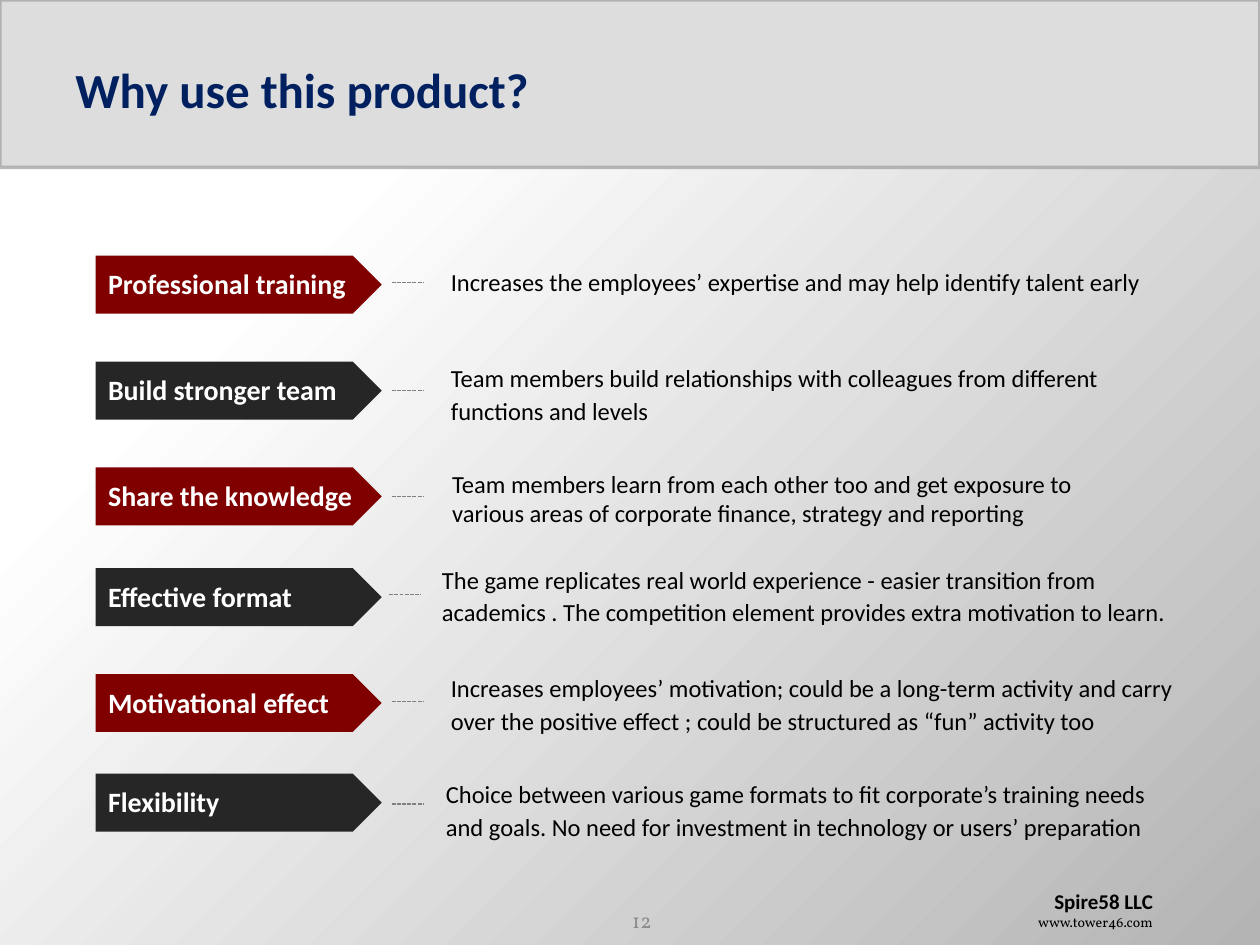
import pptx
import pptx.util
import pptx.dml.color
import pptx.enum.dml
import pptx.enum.shapes
import pptx.enum.text
import pptx.oxml
import pptx.oxml.ns
from pptx.util import Inches, Pt

COLORS = {
    "white": "FFFFFF", "shade": "B4B4B4", "band": "DDDDDD", "band_edge": "A6A6A6",
    "navy": "002060", "red": "800000", "charcoal": "262626", "black": "000000",
    "number": "8C8C8C", "dash": "808080",
}
ALIGN = pptx.enum.text.PP_ALIGN
ANCHOR = pptx.enum.text.MSO_ANCHOR
SHAPE = pptx.enum.shapes.MSO_SHAPE
qn = pptx.oxml.ns.qn
NAMESPACE = pptx.oxml.ns.nsdecls("a")

PLATE_LEFT, PLATE_WIDTH, PLATE_HEIGHT = 0.76, 2.27, 0.46
DASH_LENGTH = 0.25

# label, plate top, dash (left, y), description box, indent, line spacing in points, description
BENEFITS = [
    ("Professional training", 2.03, (3.11, 2.24), (3.48, 2.05, 5.76, 0.35), 0, 18,
     "Increases the employees’ expertise and may help identify talent early"),
    ("Build stronger team", 2.87, (3.11, 3.1), (3.36, 2.8, 6.16, 0.63), 0.12, 19,
     "Team members build relationships with colleagues from different functions and levels"),
    ("Share the knowledge", 3.71, (3.11, 3.94), (3.49, 3.67, 5.58, 0.57), 0, None,
     "Team members learn from each other too and get exposure to various areas of "
     "corporate finance, strategy and reporting"),
    ("Effective format", 4.51, (3.09, 4.72), (3.41, 4.42, 6.16, 0.61), 0, 18,
     "The game replicates real world experience - easier transition from academics . "
     "The competition element provides extra motivation to learn."),
    ("Motivational effect", 5.35, (3.11, 5.57), (3.36, 5.26, 6.16, 0.63), 0.12, 19,
     "Increases employees’ motivation; could be a long-term activity and carry over the "
     "positive effect ; could be structured as “fun” activity too"),
    ("Flexibility", 6.14, (3.11, 6.38), (3.32, 6.1, 6.09, 0.63), 0.12, 19,
     "Choice between various game formats to fit corporate’s training needs and goals. "
     "No need for investment in technology or users’ preparation"),
]


def rgb(name):
    return pptx.dml.color.RGBColor.from_string(COLORS[name])


class SlideBuilder:
    def __init__(self, page, font="Calibri"):
        self.page = page
        self.font = font

    def background(self, inner, outer):
        """Shade the page outwards from its top left corner."""
        self.page.background.fill.gradient()
        gradient = self.page.element.find(".//" + qn("a:gradFill"))
        for child in list(gradient):
            gradient.remove(child)
        stops = "".join(
            f'<a:gs pos="{position}"><a:srgbClr val="{COLORS[color]}"/></a:gs>'
            for position, color in ((24000, inner), (100000, outer)))
        gradient.append(pptx.oxml.parse_xml(f"<a:gsLst {NAMESPACE}>{stops}</a:gsLst>"))
        gradient.append(pptx.oxml.parse_xml(
            f'<a:path {NAMESPACE} path="circle">'
            '<a:fillToRect r="100000" b="100000"/></a:path>'))

    def shape(self, kind, bounds, fill):
        shape = self.page.shapes.add_shape(kind, *map(Inches, bounds))
        shape.shadow.inherit = False
        shape.fill.solid()
        shape.fill.fore_color.rgb = rgb(fill)
        shape.line.fill.background()
        return shape

    def header_band(self, bounds):
        band = self.shape(SHAPE.RECTANGLE, bounds, "band")
        band.line.color.rgb = rgb("band_edge")
        band.line.width = Pt(2)
        edge_color = band.element.find(".//" + qn("a:ln")).find(".//" + qn("a:srgbClr"))
        edge_color.append(pptx.oxml.parse_xml(f'<a:alpha {NAMESPACE} val="78000"/>'))

    def text(self, bounds, content, size, color="black", bold=False, font=None,
             align=ALIGN.LEFT, anchor=ANCHOR.TOP, indent=0, spacing=None):
        box = self.page.shapes.add_textbox(*map(Inches, bounds))
        box.text_frame.word_wrap = True
        box.text_frame.vertical_anchor = anchor
        para = box.text_frame.paragraphs[0]
        if indent:
            para._p.get_or_add_pPr().set("marL", str(Inches(indent)))
        self.fill_paragraph(para, content, size, color, bold, font, align)
        if spacing:
            para.line_spacing = Pt(spacing)
        return box

    def fill_paragraph(self, para, content, size, color="black", bold=False,
                       font=None, align=ALIGN.LEFT):
        para.text = content
        para.alignment = align
        para.font.name = font or self.font
        para.font.size = Pt(size)
        para.font.bold = bold
        para.font.color.rgb = rgb(color)

    def dash(self, left, y):
        dash = self.page.shapes.add_connector(
            pptx.enum.shapes.MSO_CONNECTOR.STRAIGHT,
            Inches(left), Inches(y), Inches(left + DASH_LENGTH), Inches(y))
        dash.line.color.rgb = rgb("dash")
        dash.line.width = Pt(0.75)
        dash.line.dash_style = pptx.enum.dml.MSO_LINE.SQUARE_DOT
        dash.element.spPr.append(pptx.oxml.parse_xml(f"<a:effectLst {NAMESPACE}/>"))


def main():
    deck = pptx.Presentation()
    deck.slide_width, deck.slide_height = Inches(10), Inches(7.5)
    builder = SlideBuilder(deck.slides.add_slide(deck.slide_layouts[6]))

    builder.background("white", "shade")
    builder.header_band((0, 0, 10, 1.33))
    builder.text((0.5, 0.08, 9, 1.25), "Why use this product?", 28, "navy", bold=True,
                 anchor=ANCHOR.MIDDLE)

    for index, (label, top, dash, bounds, indent, spacing, description) in enumerate(BENEFITS):
        color = ("red", "charcoal")[index % 2]
        builder.shape(SHAPE.PENTAGON, (PLATE_LEFT, top, PLATE_WIDTH, PLATE_HEIGHT), color)
        builder.text((PLATE_LEFT, top + 0.04, PLATE_WIDTH, PLATE_HEIGHT), label, 16,
                     "white", bold=True)
        builder.dash(*dash)
        builder.text(bounds, description, 14, indent=indent, spacing=spacing)

    company = builder.text((8, 7, 1.25, 0.44), "Spire58 LLC", 12, bold=True, align=ALIGN.RIGHT)
    builder.fill_paragraph(company.text_frame.add_paragraph(), "www.tower46.com", 8,
                           font="Vollkorn", align=ALIGN.RIGHT)
    builder.text((4.73, 7.1, 0.54, 0.4), "12", 12, "number", font="Vollkorn",
                 align=ALIGN.RIGHT, anchor=ANCHOR.MIDDLE)
    deck.save("out.pptx")


if __name__ == "__main__":
    main()
